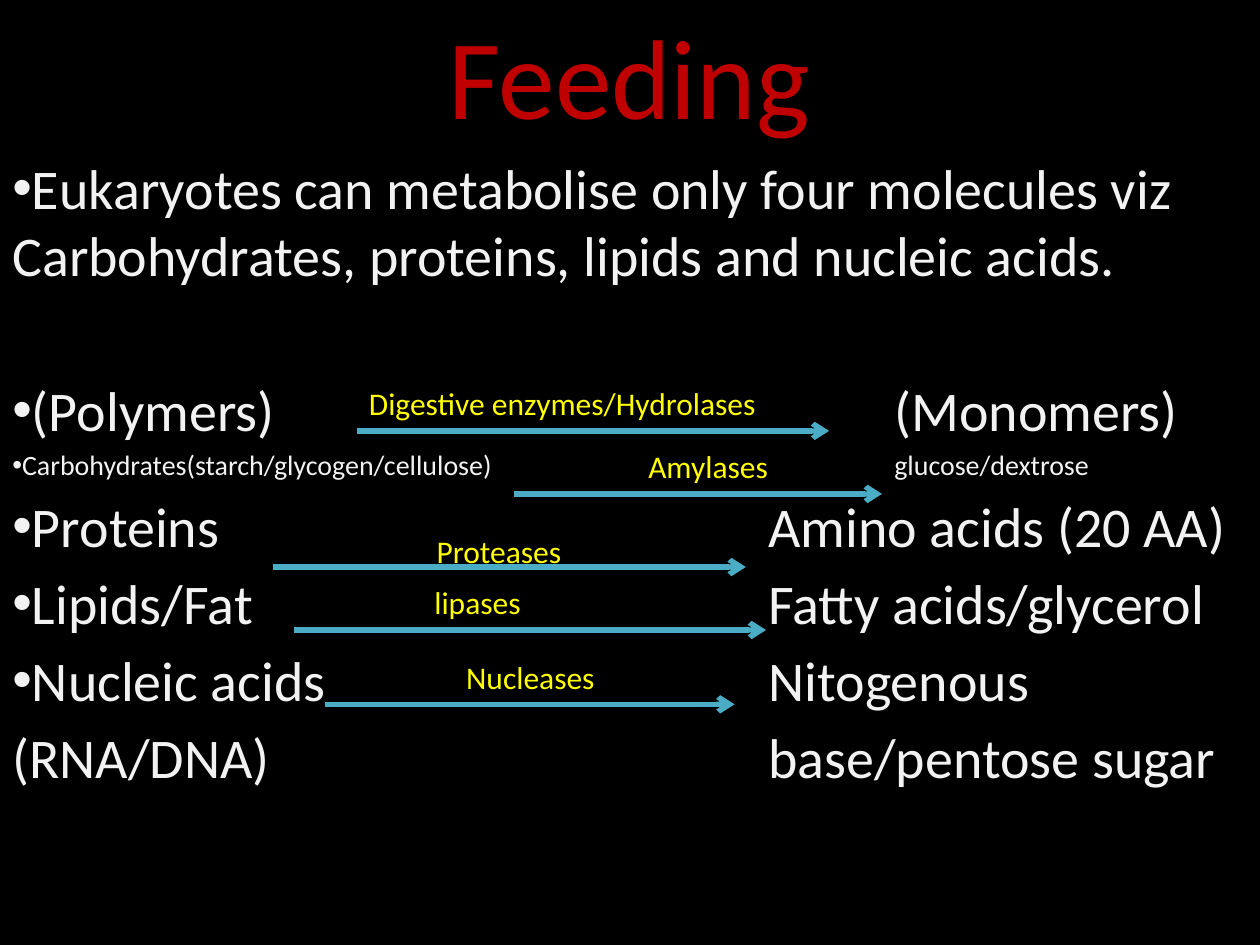
from lxml import etree
from pptx import Presentation
from pptx.dml.color import RGBColor
from pptx.enum.shapes import MSO_CONNECTOR
from pptx.enum.text import MSO_ANCHOR, PP_ALIGN
from pptx.oxml.ns import qn
from pptx.util import Inches, Pt

LEFT, CENTER = PP_ALIGN.LEFT, PP_ALIGN.CENTER
TOP, MIDDLE = MSO_ANCHOR.TOP, MSO_ANCHOR.MIDDLE
STRAIGHT = MSO_CONNECTOR.STRAIGHT

BLACK = RGBColor(0x00, 0x00, 0x00)
RED = RGBColor(0xC0, 0x00, 0x00)
PALE = RGBColor(0xF2, 0xF2, 0xF2)
YELLOW = RGBColor(0xFF, 0xFF, 0x00)
TEAL = RGBColor(0x4B, 0xAC, 0xC6)

# Content: text, size, space before in points, bullet, tab stop in inches
GAP = 5.7
TITLE = "Feeding"
BODY = [
    ("Eukaryotes can metabolise only four molecules viz "
     "Carbohydrates, proteins, lipids and nucleic acids.", 32, 0, True, None),
    ("(Polymers)\t(Monomers)", 32, 50, True, 7),
    ("Carbohydrates(starch/glycogen/cellulose)\tglucose/dextrose",
     16, GAP / 2, True, 7),
    ("Proteins\tAmino acids (20 AA)", 32, GAP, True, 6),
    ("Lipids/Fat\tFatty acids/glycerol", 32, GAP, True, 6),
    ("Nucleic acids\tNitogenous", 32, GAP, True, 6),
    ("(RNA/DNA)\tbase/pentose sugar", 32, GAP, False, 6),
]
# Enzyme, label (left, top, width), alignment, arrow (start, end, height)
STEPS = [
    ("Digestive enzymes/Hydrolases", (2.83, 3, 3.5), LEFT, (2.83, 6.58, 3.42)),
    ("Amylases", (4.33, 3.5, 2.58), CENTER, (4.08, 7, 3.92)),
    ("Proteases", (2.67, 4.17, 2.58), CENTER, (2.17, 5.92, 4.5)),
    ("lipases", (2.5, 4.58, 2.58), CENTER, (2.33, 6.08, 5)),
    ("Nucleases", (2.92, 5.17, 2.58), CENTER, (2.58, 5.83, 5.59)),
]


def add_box(slide, left, top, width, height, anchor=TOP):
    box = slide.shapes.add_textbox(*map(Inches, (left, top, width, height)))
    frame = box.text_frame
    frame.word_wrap = True
    frame.vertical_anchor = anchor
    return frame


def write(para, text, size, color, align=LEFT):
    para.alignment = align
    run = para.add_run()
    run.text = text
    run.font.color.rgb = color
    style = {"name": "Calibri", "size": Pt(size)}
    for key, value in style.items():
        setattr(run.font, key, value)


def add_marks(para, bullet, stop):
    props = para._p.get_or_add_pPr()
    if bullet:
        etree.SubElement(props, qn("a:buFont"), typeface="Arial")
        etree.SubElement(props, qn("a:buChar"), char="•")
    if stop:
        tabs = etree.SubElement(props, qn("a:tabLst"))
        etree.SubElement(tabs, qn("a:tab"), pos=str(Inches(stop)), algn="l")


def add_arrow(slide, start, end, y):
    arrow = slide.shapes.add_connector(
        STRAIGHT, Inches(start), Inches(y), Inches(end), Inches(y))
    arrow.line.color.rgb = TEAL
    arrow.line.width = Pt(3)
    etree.SubElement(arrow.line._get_or_add_ln(), qn("a:tailEnd"), type="arrow")
    etree.SubElement(arrow._element.spPr, qn("a:effectLst"))


def main():
    deck = Presentation()
    deck.slide_width, deck.slide_height = Inches(10), Inches(7.5)
    slide = deck.slides.add_slide(deck.slide_layouts[6])
    fill = slide.background.fill
    fill.solid()
    fill.fore_color.rgb = BLACK

    # Title
    frame = add_box(slide, 0.33, 0, 9.33, 1.17, MIDDLE)
    write(frame.paragraphs[0], TITLE, 64.8, RED, CENTER)

    # Polymers and their monomers
    frame = add_box(slide, 0, 1.17, 10, 6.33)
    for i, (text, size, before, bullet, stop) in enumerate(BODY):
        para = frame.add_paragraph() if i else frame.paragraphs[0]
        add_marks(para, bullet, stop)
        para.space_before = Pt(before)
        write(para, text, size, PALE)

    # Arrows with enzyme labels
    for name, (left, top, width), align, arrow in STEPS:
        add_arrow(slide, *arrow)
        frame = add_box(slide, left, top, width, 0.4)
        write(frame.paragraphs[0], name, 18, YELLOW, align)

    deck.save("out.pptx")


if __name__ == "__main__":
    main()
